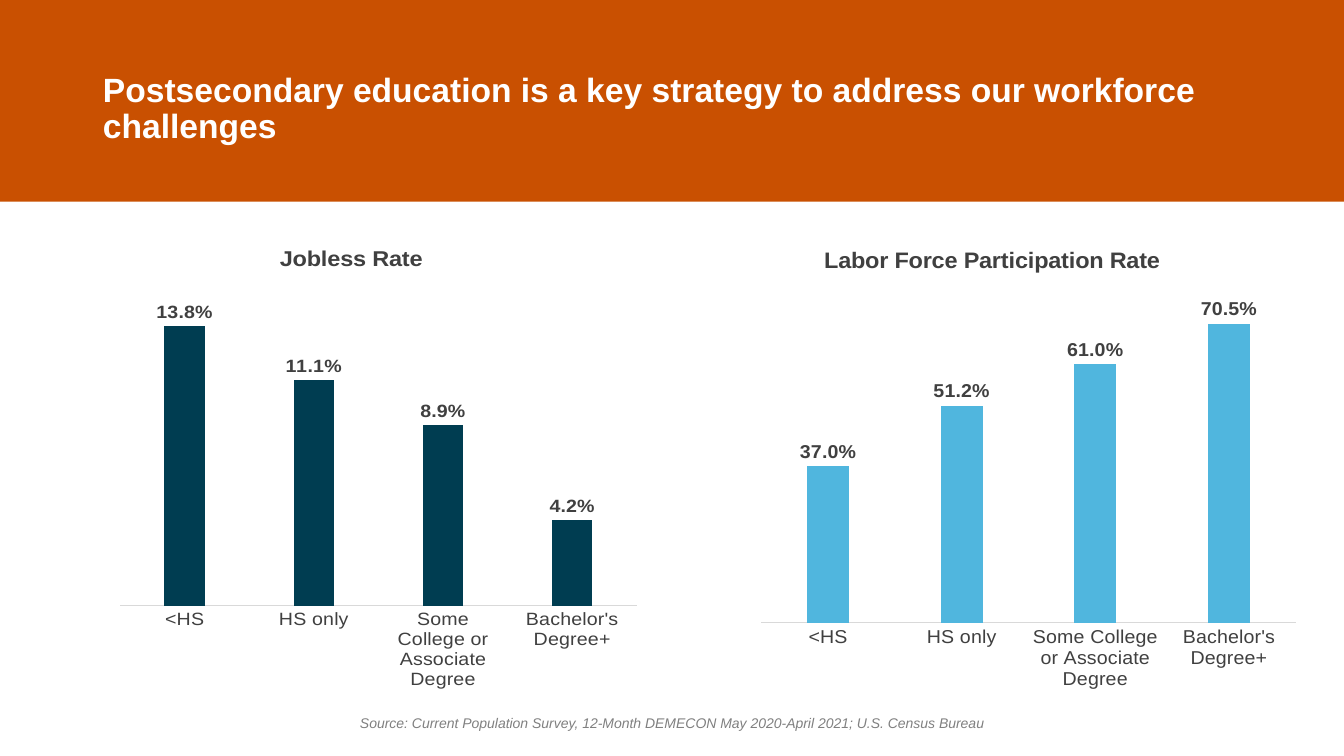
"""Build a slide comparing jobless and participation rates by education level."""
from dataclasses import dataclass

from lxml import etree
from pptx import Presentation
from pptx import util as u
from pptx.chart import data as chart_data
from pptx.dml import color
from pptx.enum import chart as chart_enum
from pptx.enum import shapes, text
from pptx.oxml import ns


@dataclass(frozen=True)
class Theme:
    """Fonts, colours and type sizes of the slide."""

    font: str = "Arial"
    band: str = "C95001"
    heading: str = "FFFFFF"
    chart_text: str = "404040"
    source: str = "808080"
    axis: str = "D9D9D9"
    jobless: str = "003D51"
    participation: str = "50B6DE"
    heading_size: float = 24
    chart_title_size: float = 16.8
    chart_size: float = 14
    source_size: float = 10


@dataclass(frozen=True)
class RateChart:
    """One column chart of rates by education level."""

    title: str
    left: float
    plot_width: float
    values: tuple[float, ...]
    maximum: float
    fill: str


THEME = Theme()
LEVELS = ("<HS", "HS only", "Some College or Associate Degree", "Bachelor's Degree+")
CHARTS = (
    RateChart("Jobless Rate", 1.19, 0.85, (0.138, 0.111, 0.089, 0.042), 0.16, THEME.jobless),
    RateChart("Labor Force Participation Rate", 17.35, 0.88,
              (0.37, 0.512, 0.61, 0.705), 0.8, THEME.participation),
)


def style_font(font, size: float, rgb: str, bold: bool = False, italic: bool = False) -> None:
    """Set the face, size, colour and weight of a font."""
    font.name = THEME.font
    font.size = u.Pt(size)
    font.bold = bold
    font.italic = italic
    font.color.rgb = color.RGBColor.from_string(rgb)


def place(shape, left: float, top: float, width: float, height: float) -> None:
    """Move and size a shape in centimetres."""
    shape.left, shape.top = u.Cm(left), u.Cm(top)
    shape.width, shape.height = u.Cm(width), u.Cm(height)


def add_heading(slide, width: int) -> None:
    """Fill the title placeholder and lay the colour band behind it."""
    title = slide.shapes.title
    place(title, 2.34, 0.48, 29.21, 4.57)
    frame = title.text_frame
    frame.word_wrap = True
    frame.auto_size = text.MSO_AUTO_SIZE.NONE
    frame.vertical_anchor = text.MSO_ANCHOR.MIDDLE
    paragraph = frame.paragraphs[0]
    paragraph.alignment = text.PP_ALIGN.LEFT
    paragraph.line_spacing = 0.9
    run = paragraph.add_run()
    run.text = "Postsecondary education is a key strategy to address our workforce challenges"
    style_font(run.font, THEME.heading_size, THEME.heading, bold=True)

    band = slide.shapes.add_shape(shapes.MSO_SHAPE.RECTANGLE, 0, 0, width, u.Cm(5.08))
    band.shadow.inherit = False
    band.fill.solid()
    band.fill.fore_color.rgb = color.RGBColor.from_string(THEME.band)
    band.line.fill.background()
    title.element.addprevious(band.element)


def add_source(slide) -> None:
    """Add the centred source line."""
    box = slide.shapes.add_textbox(u.Cm(1.04), u.Cm(17.88), u.Cm(31.78), u.Cm(0.69))
    box.text_frame.word_wrap = True
    paragraph = box.text_frame.paragraphs[0]
    paragraph.alignment = text.PP_ALIGN.CENTER
    run = paragraph.add_run()
    run.text = ("Source: Current Population Survey, 12-Month DEMECON May 2020-April 2021; "
                "U.S. Census Bureau")
    style_font(run.font, THEME.source_size, THEME.source, italic=True)


def set_plot_layout(chart, **fractions: float) -> None:
    """Fix the inner plot area as fractions of the chart."""
    plot_area = chart.element.find(".//" + ns.qn("c:plotArea"))
    for layout in plot_area.findall(ns.qn("c:layout")):
        plot_area.remove(layout)
    layout = etree.Element(ns.qn("c:layout"))
    manual = etree.SubElement(layout, ns.qn("c:manualLayout"))
    settings = {"layoutTarget": "inner", "xMode": "edge", "yMode": "edge", **fractions}
    for name, value in settings.items():
        etree.SubElement(manual, ns.qn(f"c:{name}")).set("val", str(value))
    plot_area.insert(0, layout)


def add_rate_chart(slide, rate: RateChart) -> None:
    """Draw one chart with its title, columns and labels."""
    data = chart_data.CategoryChartData(number_format="0.0%")
    data.categories = LEVELS
    data.add_series(rate.title, rate.values)
    chart = slide.shapes.add_chart(
        chart_enum.XL_CHART_TYPE.COLUMN_CLUSTERED,
        u.Cm(rate.left), u.Cm(5.74), u.Cm(15.32), u.Cm(11.63), data).chart
    style_font(chart.font, THEME.chart_size, THEME.chart_text)
    chart.has_legend = False
    chart.has_title = True
    run = chart.chart_title.text_frame.paragraphs[0].add_run()
    run.text = rate.title
    style_font(run.font, THEME.chart_title_size, THEME.chart_text, bold=True)

    category_axis = chart.category_axis
    category_axis.major_tick_mark = chart_enum.XL_TICK_MARK.NONE
    category_axis.format.line.color.rgb = color.RGBColor.from_string(THEME.axis)
    category_axis.format.line.width = u.Pt(0.75)
    style_font(category_axis.tick_labels.font, THEME.chart_size, THEME.chart_text)
    value_axis = chart.value_axis
    value_axis.minimum_scale = 0
    value_axis.maximum_scale = rate.maximum
    value_axis.has_major_gridlines = False
    value_axis.visible = False

    plot = chart.plots[0]
    plot.gap_width = 219
    plot.overlap = -27
    plot.vary_by_categories = False
    series = plot.series[0]
    series.format.fill.solid()
    series.format.fill.fore_color.rgb = color.RGBColor.from_string(rate.fill)
    labels = series.data_labels
    labels.show_value = True
    labels.number_format = "0.0%"
    labels.number_format_is_linked = False
    labels.position = chart_enum.XL_LABEL_POSITION.OUTSIDE_END
    style_font(labels.font, THEME.chart_size, THEME.chart_text, bold=True)
    set_plot_layout(chart, x=0.12, y=0.127, w=rate.plot_width, h=0.775)


def main() -> None:
    """Build and save the presentation."""
    presentation = Presentation()
    presentation.slide_width = u.Cm(33.87)
    presentation.slide_height = u.Cm(19.05)
    slide = presentation.slides.add_slide(presentation.slide_layouts[5])
    add_heading(slide, presentation.slide_width)
    add_source(slide)
    for rate in CHARTS:
        add_rate_chart(slide, rate)
    presentation.save("out.pptx")


if __name__ == "__main__":
    main()
